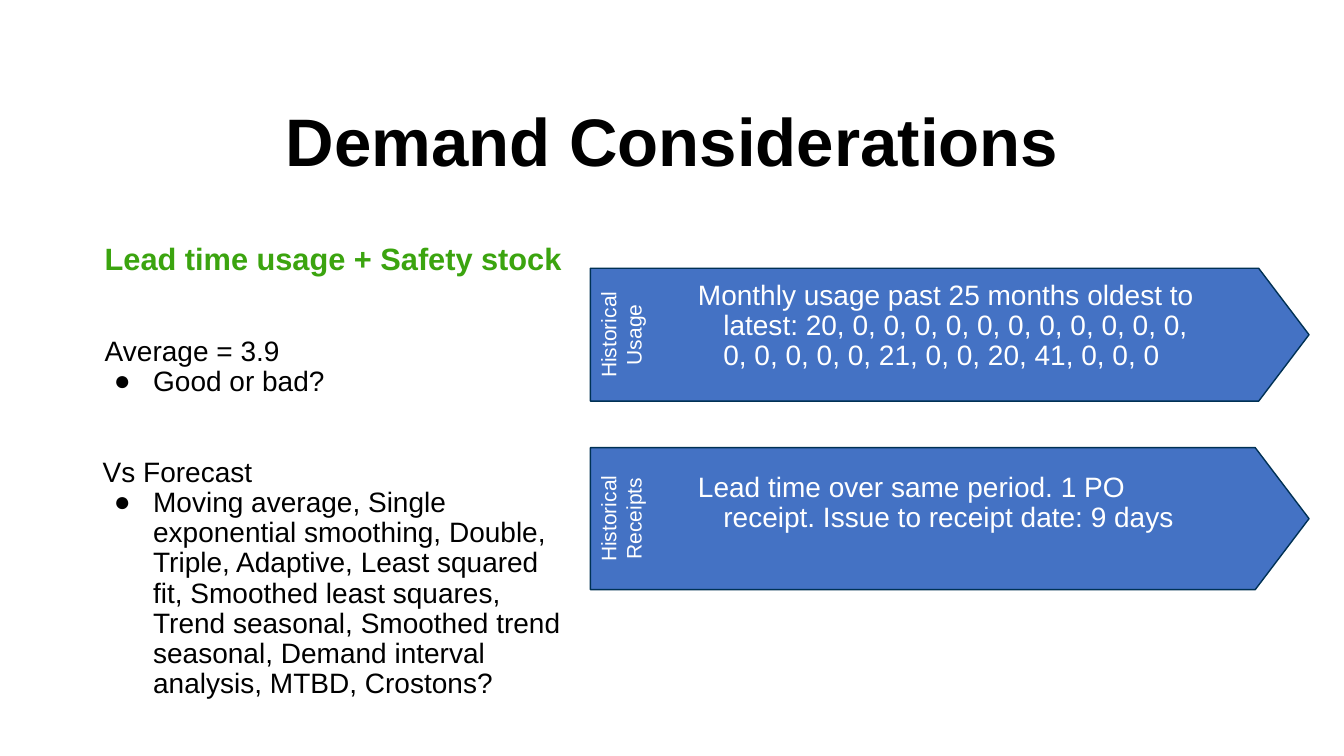
from dataclasses import dataclass

from lxml import etree
from pptx import Presentation
from pptx import util as u
from pptx.dml.color import RGBColor
from pptx.enum import shapes, text
from pptx.oxml import ns


@dataclass(frozen=True)
class Theme:
    font: str = "Arial"
    ink: str = "000000"
    accent: str = "3BA40F"
    arrow: str = "4472C4"
    outline: str = "003154"
    light: str = "FFFFFF"
    title: int = 48
    heading: int = 22
    body: int = 20
    label: int = 15


@dataclass(frozen=True)
class Line:
    """One paragraph; indents are in centimetres, gap in points."""
    words: str
    size: int
    color: str
    bold: bool = False
    left: float = 0
    hanging: float = 0
    gap: float = 0
    spacing: float = 0.9
    bullet: str = ""
    align: text.PP_ALIGN = text.PP_ALIGN.LEFT


@dataclass(frozen=True)
class Arrow:
    label: str
    top: float
    height: float
    label_depth: float


THEME = Theme()
ARROW_LEFT, ARROW_WIDTH = 14.88, 18.11
BULLET = {"left": 1.27, "hanging": 0.99, "bullet": "●"}
RIGHT_TEXT = {"left": 1.27, "hanging": 0.64}

ARROWS = [
    Arrow("Historical Receipts", 11.28, 3.58, 7.87),
    Arrow("Historical Usage", 6.76, 3.35, 7.54),
]
METHODS = (
    "Moving average, Single exponential smoothing, Double, Triple, Adaptive, "
    "Least squared fit, Smoothed least squares, Trend seasonal, Smoothed trend "
    "seasonal, Demand interval analysis, MTBD, Crostons?"
)
USAGE = (
    "Monthly usage past 25 months oldest to latest: 20, 0, 0, 0, 0, 0, 0, 0, 0, "
    "0, 0, 0, 0, 0, 0, 0, 0, 21, 0, 0, 20, 41, 0, 0, 0"
)
LEAD_TIME = "Lead time over same period. 1 PO receipt. Issue to receipt date: 9 days"

CONSIDERATIONS = [
    Line("Lead time usage + Safety stock", THEME.heading, THEME.accent, bold=True, left=0.05),
    Line("Average = 3.9", THEME.body, THEME.ink, left=0.05, gap=43),
    Line("Good or bad?", THEME.body, THEME.ink, **BULLET),
    Line("Vs Forecast", THEME.body, THEME.ink, gap=43),
    Line(METHODS, THEME.body, THEME.ink, **BULLET),
]
HISTORY = [
    Line(USAGE, THEME.body, THEME.light, **RIGHT_TEXT),
    Line(LEAD_TIME, THEME.body, THEME.light, gap=72.5, **RIGHT_TEXT),
]


def place(shape, left: float, top: float, width: float, height: float) -> None:
    frame = {"left": left, "top": top, "width": width, "height": height}
    for name, value in frame.items():
        setattr(shape, name, u.Cm(value))


def add_bullet(properties, mark: str, color: str) -> None:
    tint = etree.SubElement(properties, ns.qn("a:buClr"))
    etree.SubElement(tint, ns.qn("a:srgbClr")).set("val", color)
    etree.SubElement(properties, ns.qn("a:buFont")).set("typeface", THEME.font)
    etree.SubElement(properties, ns.qn("a:buChar")).set("char", mark)


def write(shape, lines: list[Line], anchor=text.MSO_ANCHOR.TOP) -> None:
    box = shape.text_frame
    settings = {"word_wrap": True, "auto_size": text.MSO_AUTO_SIZE.NONE, "vertical_anchor": anchor}
    for name, value in settings.items():
        setattr(box, name, value)
    for index, line in enumerate(lines):
        para = box.add_paragraph() if index else box.paragraphs[0]
        properties = para._p.get_or_add_pPr()
        properties.set("marL", str(u.Cm(line.left)))
        properties.set("indent", str(-u.Cm(line.hanging)))
        if line.bullet:
            add_bullet(properties, line.bullet, line.color)
        layout = {"alignment": line.align, "line_spacing": line.spacing,
                  "space_before": u.Pt(line.gap)}
        for name, value in layout.items():
            setattr(para, name, value)
        span = para.add_run()
        span.text = line.words
        style = {"name": THEME.font, "size": u.Pt(line.size), "bold": line.bold}
        for name, value in style.items():
            setattr(span.font, name, value)
        span.font.color.rgb = RGBColor.from_string(line.color)


def add_text(page, lines: list[Line], left: float, top: float, width: float, height: float):
    box = page.shapes.add_textbox(u.Cm(left), u.Cm(top), u.Cm(width), u.Cm(height))
    write(box, lines)
    return box


def add_arrow(page, arrow: Arrow) -> None:
    shape = page.shapes.add_shape(
        shapes.MSO_SHAPE.PENTAGON, u.Cm(ARROW_LEFT), u.Cm(arrow.top),
        u.Cm(ARROW_WIDTH), u.Cm(arrow.height))
    shape.shadow.inherit = False
    shape.adjustments[0] = 0.379
    shape.fill.solid()
    shape.fill.fore_color.rgb = RGBColor.from_string(THEME.arrow)
    shape.line.color.rgb = RGBColor.from_string(THEME.outline)
    shape.line.width = u.Pt(1)

    # The label turns about its centre and starts at the arrow's flat end
    shift = (arrow.label_depth - arrow.height) / 2
    caption = Line(arrow.label, THEME.label, THEME.light, spacing=1,
                   align=text.PP_ALIGN.CENTER)
    label = add_text(page, [caption], ARROW_LEFT + shift, arrow.top - shift,
                     arrow.height, arrow.label_depth)
    label.rotation = 270


def main() -> None:
    deck = Presentation()
    deck.slide_width, deck.slide_height = u.Cm(33.87), u.Cm(19.05)
    page = deck.slides.add_slide(deck.slide_layouts.get_by_name("Title Only"))

    # Title
    title = page.shapes.title
    place(title, 2.34, 1.02, 29.21, 3.68)
    heading = Line("Demand Considerations", THEME.title, THEME.ink, bold=True,
                   align=text.PP_ALIGN.CENTER)
    write(title, [heading], text.MSO_ANCHOR.BOTTOM)

    # Left column
    add_text(page, CONSIDERATIONS, 2.34, 6.02, 12.17, 12.09)

    # Arrows with their history text on top
    for arrow in ARROWS:
        add_arrow(page, arrow)
    add_text(page, HISTORY, 16.71, 6.96, 13.67, 10.39)

    deck.save("out.pptx")


if __name__ == "__main__":
    main()
